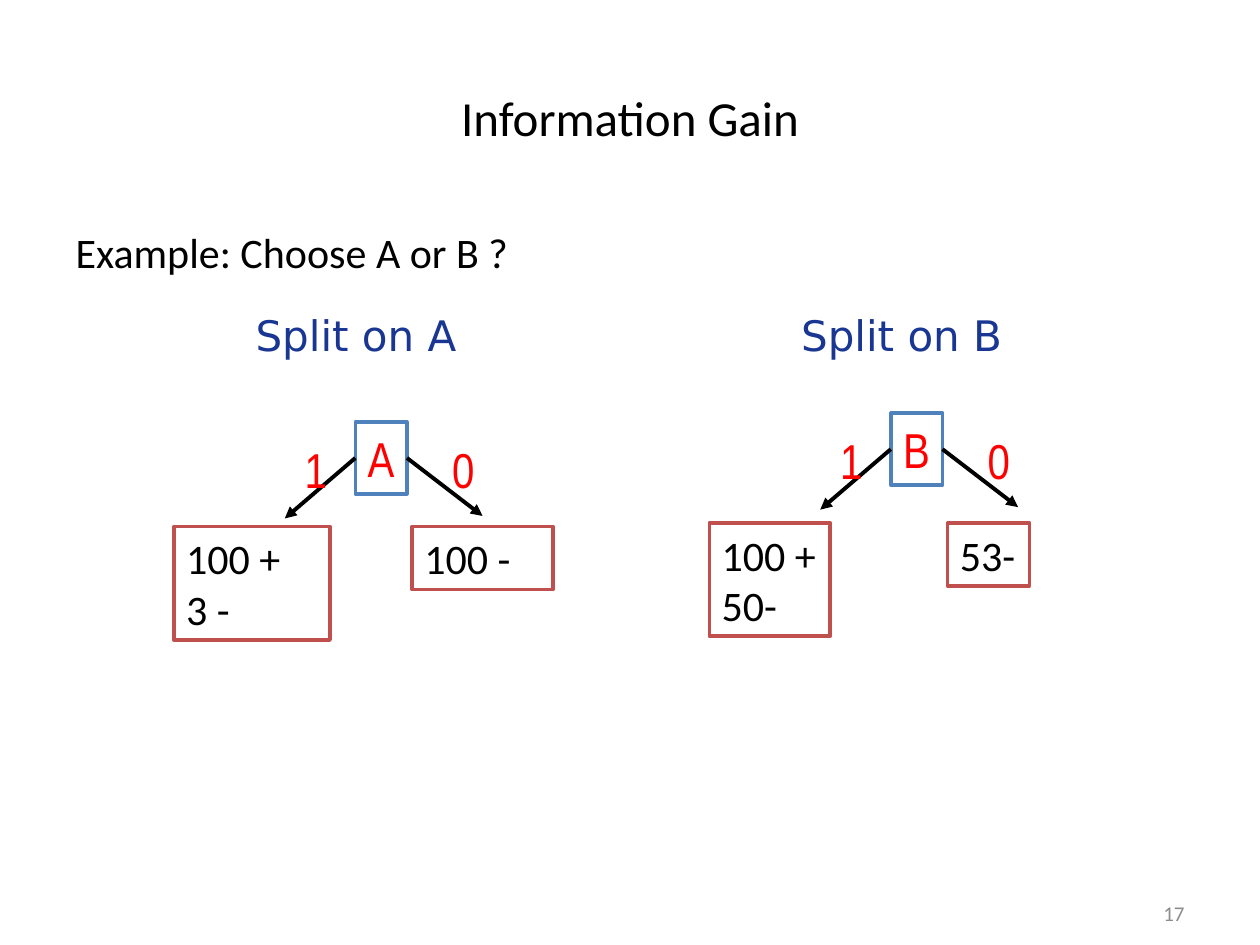
from lxml.etree import SubElement
from pptx import Presentation
from pptx.dml.color import RGBColor
from pptx.enum.shapes import MSO_CONNECTOR
from pptx.enum.text import MSO_ANCHOR, MSO_AUTO_SIZE, PP_ALIGN
from pptx.oxml.ns import qn
from pptx.util import Inches, Pt

TITLE = "Information Gain"
QUESTION = "Example: Choose A or B ?"
PAGE = "17"
BLACK, WHITE, RED, NAVY, GREY = "000000", "FFFFFF", "FF0000", "193693", "8C8C8C"
NODE_LINE, LEAF_LINE = "4F81BD", "C0504D"
NODE_W, NODE_H = 0.41, 0.57

TREES = [
    dict(name="A", node=(2.82, 3.35), heading_x=1.93, leaf_y=4.18,
         leaves=[(1.38, 1.24, ["100 +", "3 -"]), (3.27, 1.12, ["100 -"])]),
    dict(name="B", node=(7.07, 3.28), heading_x=6.26, leaf_y=4.15,
         leaves=[(5.63, 0.96, ["100 +", "50-"]), (7.52, 0.65, ["53-"])]),
]
BRANCHES = [
    dict(label="1", label_dx=-0.5, start_dx=0, end_dx=-0.56, drop=0.48),
    dict(label="0", label_dx=0.67, start_dx=NODE_W, end_dx=1.01, drop=0.46),
]


def color(value):
    return RGBColor.from_string(value)


def write(tf, lines, size=24, font="Calibri", ink=BLACK, align=None):
    for i, line in enumerate(lines):
        p = tf.paragraphs[0] if i == 0 else tf.add_paragraph()
        p.alignment = align
        r = p.add_run()
        r.text = line
        r.font.size = Pt(size)
        r.font.name = font
        r.font.color.rgb = color(ink)


def place(sp, left, top, width, height):
    sp.left, sp.top = Inches(left), Inches(top)
    sp.width, sp.height = Inches(width), Inches(height)


def add_box(s, left, top, width, height, lines, border=None, **fmt):
    sp = s.shapes.add_textbox(Inches(left), Inches(top), Inches(width), Inches(height))
    if border:
        sp.fill.solid()
        sp.fill.fore_color.rgb = color(WHITE)
        sp.line.color.rgb = color(border)
        sp.line.width = Pt(2)
    tf = sp.text_frame
    tf.word_wrap = False
    tf.auto_size = MSO_AUTO_SIZE.SHAPE_TO_FIT_TEXT
    write(tf, lines, **fmt)


def add_arrow(s, x1, y1, x2, y2):
    c = s.shapes.add_connector(MSO_CONNECTOR.STRAIGHT, Inches(x1), Inches(y1),
                               Inches(x2), Inches(y2))
    c.line.color.rgb = color(BLACK)
    c.line.width = Pt(2.25)
    SubElement(c.line._get_or_add_ln(), qn("a:tailEnd"), type="triangle")
    SubElement(c._element.spPr, qn("a:effectLst"))


def add_tree(s, tree):
    x, y = tree["node"]
    red = dict(size=28, font="Arial Narrow", ink=RED)
    add_box(s, x, y, NODE_W, NODE_H, [tree["name"]], border=NODE_LINE, **red)
    start_y = y + NODE_H / 2
    for b in BRANCHES:
        add_arrow(s, x + b["start_dx"], start_y, x + b["end_dx"], start_y + b["drop"])
        add_box(s, x + b["label_dx"], y + 0.09, 0.38, NODE_H, [b["label"]], **red)
    for left, width, lines in tree["leaves"]:
        height = 0.1 + 0.4 * len(lines)
        add_box(s, left, tree["leaf_y"], width, height, lines, border=LEAF_LINE)
    add_box(s, tree["heading_x"], 2.41, 1.85, 0.5, [f"Split on {tree['name']}"],
            font="DejaVu Sans", ink=NAVY)


def add_page_number(s):
    sp = s.shapes.add_textbox(Inches(7.17), Inches(6.95), Inches(2.33), Inches(0.4))
    tf = sp.text_frame
    tf.word_wrap = True
    tf.vertical_anchor = MSO_ANCHOR.BOTTOM
    tf.margin_bottom = 0
    write(tf, [PAGE], size=12, ink=GREY, align=PP_ALIGN.RIGHT)


def main():
    prs = Presentation()
    prs.slide_width, prs.slide_height = Inches(10), Inches(7.5)
    s = prs.slides.add_slide(prs.slide_layouts[1])

    title, body = s.placeholders
    place(title, 0.5, 0.3, 9, 1.25)
    title.text_frame.vertical_anchor = MSO_ANCHOR.MIDDLE
    write(title.text_frame, [TITLE], size=28, align=PP_ALIGN.CENTER)

    place(body, 0.5, 1.75, 9, 4.95)
    write(body.text_frame, [QUESTION])
    pPr = body.text_frame.paragraphs[0]._p.get_or_add_pPr()
    pPr.set("marL", str(Inches(0.38)))
    pPr.set("indent", str(Inches(-0.38)))
    SubElement(pPr, qn("a:buNone"))

    for tree in TREES:
        add_tree(s, tree)
    add_page_number(s)
    prs.save("out.pptx")


if __name__ == "__main__":
    main()
